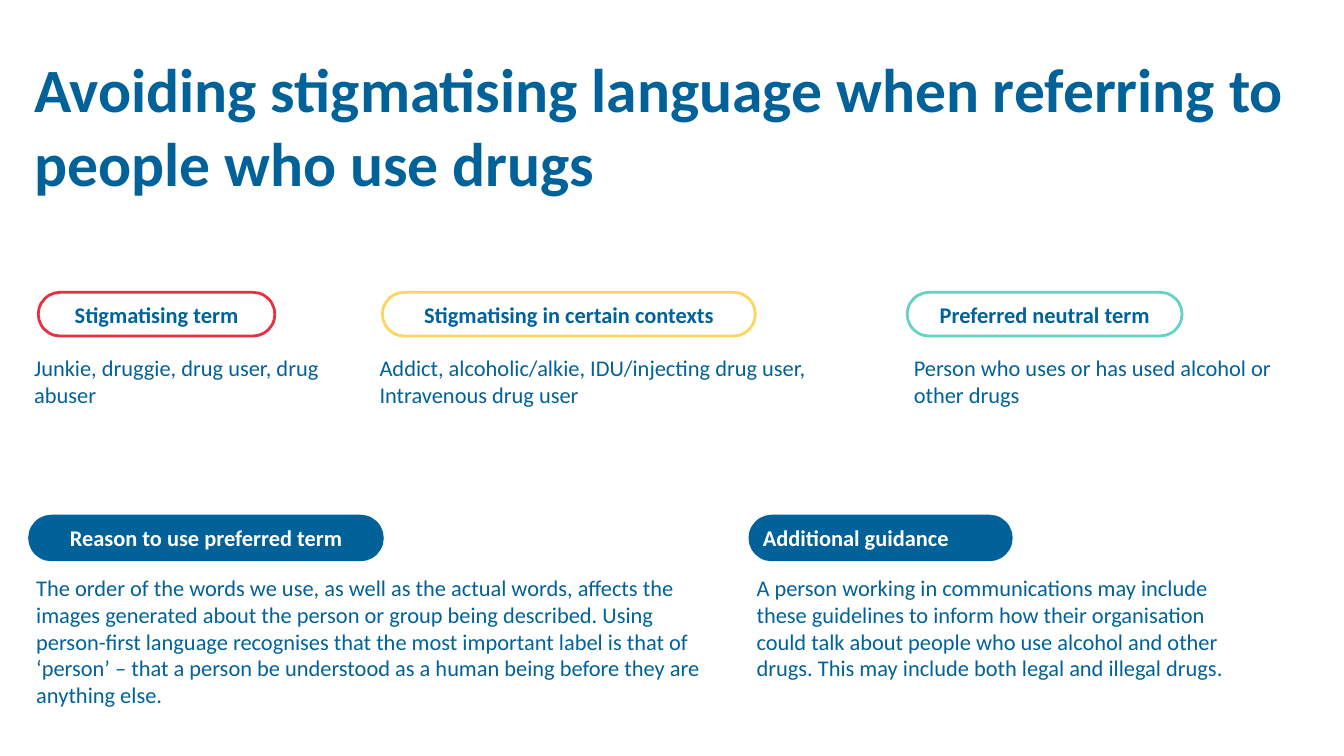
from pptx import Presentation
from pptx.dml.color import RGBColor
from pptx.enum.shapes import MSO_SHAPE as SHAPE
from pptx.enum.text import MSO_ANCHOR as ANCHOR, PP_ALIGN as ALIGN
from pptx.util import Pt

BLUE, WHITE = "006298", "FFFFFF"
RED, YELLOW, TEAL = "E83040", "FDD65B", "66D1C6"


def color(value):
    return RGBColor.from_string(value)


class Deck:
    font = "Calibri"
    size = 24
    pill_height = 46.8

    def __init__(self, prs):
        self.s = prs.slides.add_slide(prs.slide_layouts[6])

    def add_run(self, tf, text, size, ink, bold, align, after):
        tf.word_wrap = True
        p = tf.paragraphs[0]
        p.alignment = align
        p.space_after = Pt(after)
        r = p.add_run()
        r.text = text
        r.font.name = self.font
        r.font.size = Pt(size)
        r.font.bold = bold
        r.font.color.rgb = color(ink)

    def text(self, x, y, w, h, text, size=size, bold=False, after=0):
        sp = self.s.shapes.add_textbox(Pt(x), Pt(y), Pt(w), Pt(h))
        self.add_run(sp.text_frame, text, size, BLUE, bold, ALIGN.LEFT, after)

    def pill(self, x, y, w, text, line, fill=None, ink=BLUE,
             align=ALIGN.CENTER, after=9):
        sp = self.s.shapes.add_shape(SHAPE.ROUNDED_RECTANGLE, Pt(x), Pt(y),
                                     Pt(w), Pt(self.pill_height))
        sp.adjustments[0] = 0.5
        sp.shadow.inherit = False
        if fill:
            sp.fill.solid()
            sp.fill.fore_color.rgb = color(fill)
        else:
            sp.fill.background()
        sp.line.color.rgb = color(line)
        sp.line.width = Pt(3)
        sp.text_frame.vertical_anchor = ANCHOR.MIDDLE
        self.add_run(sp.text_frame, text, self.size, ink, True, align, after)


def main():
    prs = Presentation()
    prs.slide_width, prs.slide_height = Pt(1440), Pt(810)
    deck = Deck(prs)

    # Title
    deck.text(29.5, 51, 1362, 167,
              "Avoiding stigmatising language when referring to "
              "people who use drugs", size=66, bold=True)

    # Terms: pill x, width, label, outline; text x, width, examples
    terms = [
        (41, 253.5, "Stigmatising term", RED,
         29.5, 380, "Junkie, druggie, drug user, drug abuser"),
        (409.7, 399.6, "Stigmatising in certain contexts", YELLOW,
         399.6, 544.3, "Addict, alcoholic/alkie, IDU/injecting drug user, "
         "Intravenous drug user"),
        (972, 294.5, "Preferred neutral term", TEAL,
         972, 419.8, "Person who uses or has used alcohol or other drugs"),
    ]
    for pill_x, pill_w, label, line, x, w, examples in terms:
        deck.pill(pill_x, 313.2, pill_w, label, line)
        deck.text(x, 375.8, w, 65.5, examples, after=9)

    # Reason and guidance: x, pill width, label, alignment, space after,
    # text width, text height, text
    notes = [
        (31.7, 378, "Reason to use preferred term", ALIGN.CENTER, 9, 743, 152.6,
         "The order of the words we use, as well as the actual words, affects "
         "the images generated about the person or group being described. "
         "Using person-first language recognises that the most important "
         "label is that of ‘person’ – that a person be understood as a human "
         "being before they are anything else."),
        (803.5, 280, "Additional guidance", ALIGN.LEFT, 0, 521.3, 123.8,
         "A person working in communications may include these guidelines to "
         "inform how their organisation could talk about people who use "
         "alcohol and other drugs. This may include both legal and illegal "
         "drugs."),
    ]
    for x, pill_w, label, align, after, w, h, body in notes:
        deck.pill(x, 553, pill_w, label, BLUE, BLUE, WHITE, align, after)
        deck.text(x, 611.3, w, h, body)

    prs.save("out.pptx")


if __name__ == "__main__":
    main()
